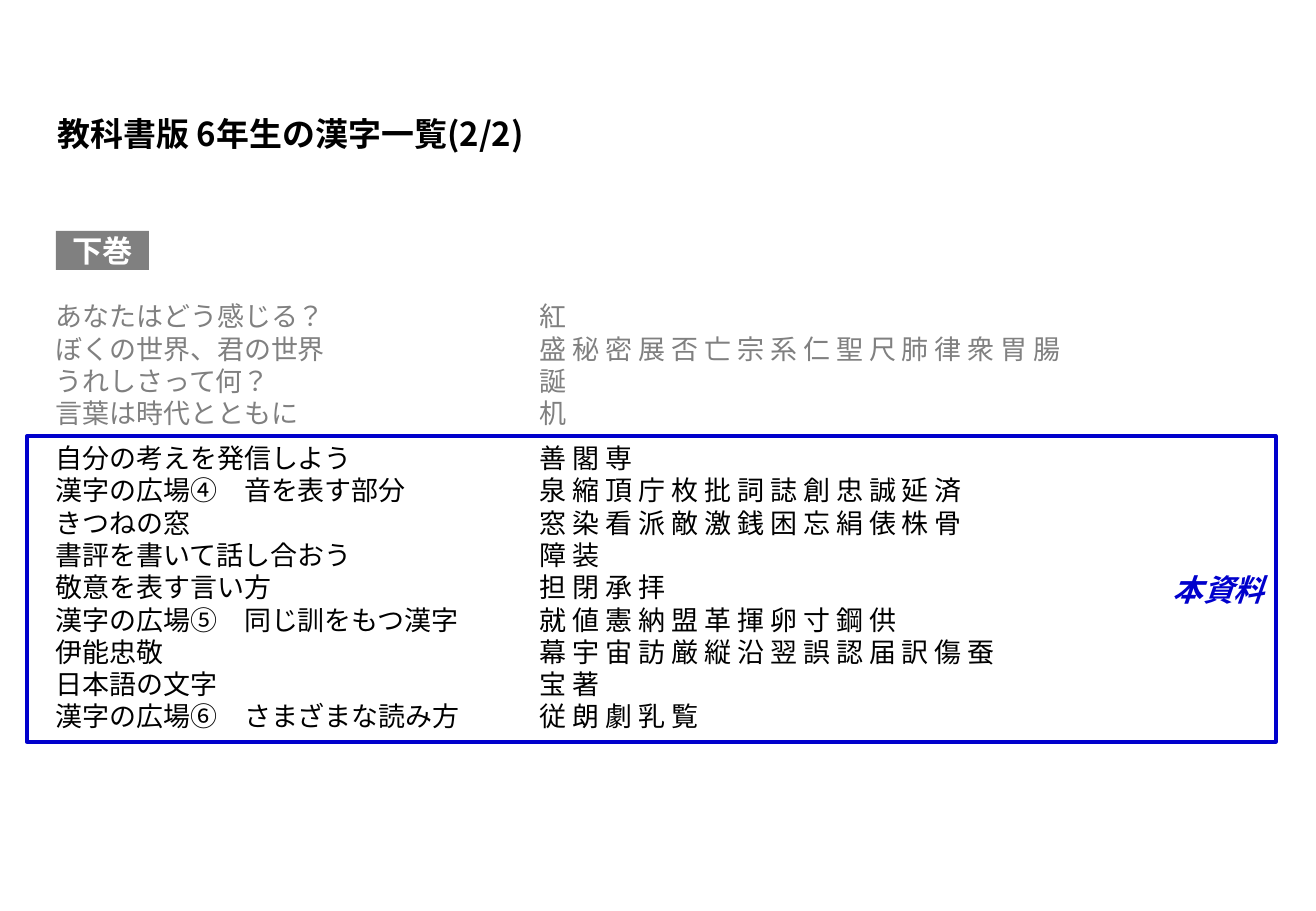
from lxml import etree
from pptx import Presentation
from pptx import util as u
from pptx.dml.color import RGBColor
from pptx.enum import lang, shapes, text
from pptx.oxml.ns import qn

PX = 7526  # EMU per px
FONT = "Noto Sans CJK JP"
GREY, BLUE, BLACK, WHITE = "808080", "0000CC", "000000", "FFFFFF"
KANJI_TAB = 484
LINE_HEIGHT = u.Pt(19.15)

OTHER_UNITS = [
    ("あなたはどう感じる？", "紅"),
    ("ぼくの世界、君の世界", "盛 秘 密 展 否 亡 宗 系 仁 聖 尺 肺 律 衆 胃 腸"),
    ("うれしさって何？", "誕"),
    ("言葉は時代とともに", "机"),
]
COVERED_UNITS = [
    ("自分の考えを発信しよう", "善 閣 専"),
    ("漢字の広場④　音を表す部分", "泉 縮 頂 庁 枚 批 詞 誌 創 忠 誠 延 済"),
    ("きつねの窓", "窓 染 看 派 敵 激 銭 困 忘 絹 俵 株 骨"),
    ("書評を書いて話し合おう", "障 装"),
    ("敬意を表す言い方", "担 閉 承 拝"),
    ("漢字の広場⑤　同じ訓をもつ漢字", "就 値 憲 納 盟 革 揮 卵 寸 鋼 供"),
    ("伊能忠敬", "幕 宇 宙 訪 厳 縦 沿 翌 誤 認 届 訳 傷 蚕"),
    ("日本語の文字", "宝 著"),
    ("漢字の広場⑥　さまざまな読み方", "従 朗 劇 乳 覧"),
]


def px(*lengths):
    return [length * PX for length in lengths]


def rgb(code):
    return RGBColor.from_string(code)


def style(para, size, color, bold=False, italic=False, align=text.PP_ALIGN.LEFT):
    """Format a paragraph, with the same face for Latin and Japanese."""
    para.alignment = align
    font = para.font
    font.size, font.bold, font.italic = u.Pt(size), bold, italic
    font.color.rgb = rgb(color)
    font.language_id = lang.MSO_LANGUAGE_ID.JAPANESE
    font.name = FONT
    latin = para._p.pPr.find(qn("a:defRPr")).find(qn("a:latin"))
    east_asian = etree.Element(qn("a:ea"), typeface=FONT)
    latin.addnext(east_asian)


def add_tab(para, position):
    tabs = etree.Element(qn("a:tabLst"))
    etree.SubElement(tabs, qn("a:tab"), pos=str(position * PX), algn="l")
    para._p.pPr.find(qn("a:defRPr")).addprevious(tabs)


def place_title(page, box):
    title = page.shapes.title
    title.left, title.top, title.width, title.height = px(*box)
    frame = title.text_frame
    frame.text = "教科書版 6年生の漢字一覧(2/2)"
    frame.auto_size = text.MSO_AUTO_SIZE.NONE
    frame.vertical_anchor = text.MSO_ANCHOR.MIDDLE
    style(frame.paragraphs[0], 19.5, BLACK, bold=True)


def add_label_box(page, box, label, fill=None, line=None, **format):
    shape = page.shapes.add_shape(shapes.MSO_SHAPE.RECTANGLE, *px(*box))
    shape.shadow.inherit = False
    if fill:
        shape.fill.solid()
        shape.fill.fore_color.rgb = rgb(fill)
    else:
        shape.fill.background()
    if line:
        shape.line.color.rgb = rgb(line)
        shape.line.width = u.Pt(2)
    else:
        shape.line.fill.background()
    frame = shape.text_frame
    frame.text = label
    frame.vertical_anchor = text.MSO_ANCHOR.MIDDLE
    style(frame.paragraphs[0], 18, bold=True, **format)


def add_kanji_list(page, box):
    """List each unit with its kanji at a shared tab stop."""
    frame = page.shapes.add_textbox(*px(*box)).text_frame
    frame.word_wrap = True
    rows = [(unit, GREY) for unit in OTHER_UNITS]
    rows += [(unit, BLACK) for unit in COVERED_UNITS]
    for index, ((unit, kanji), color) in enumerate(rows):
        para = frame.add_paragraph() if index else frame.paragraphs[0]
        para.text = f"{unit}\t{kanji}"
        para.line_spacing = LINE_HEIGHT
        para.space_before = u.Pt(7.5 if index == len(OTHER_UNITS) else 0)
        style(para, 16, color)
        add_tab(para, KANJI_TAB)


def main():
    deck = Presentation()
    deck.slide_width, deck.slide_height = px(1316, 911)
    page = deck.slides.add_slide(deck.slide_layouts.get_by_name("Title Only"))
    place_title(page, (45, 107, 956, 52))
    add_label_box(page, (56, 231, 93, 39), "下巻", fill=GREY,
                  color=WHITE, align=text.PP_ALIGN.CENTER)
    add_kanji_list(page, (44, 294, 1177, 449))
    add_label_box(page, (27, 436, 1249, 306), "本資料", line=BLUE,
                  color=BLUE, italic=True, align=text.PP_ALIGN.RIGHT)
    deck.save("out.pptx")


if __name__ == "__main__":
    main()
